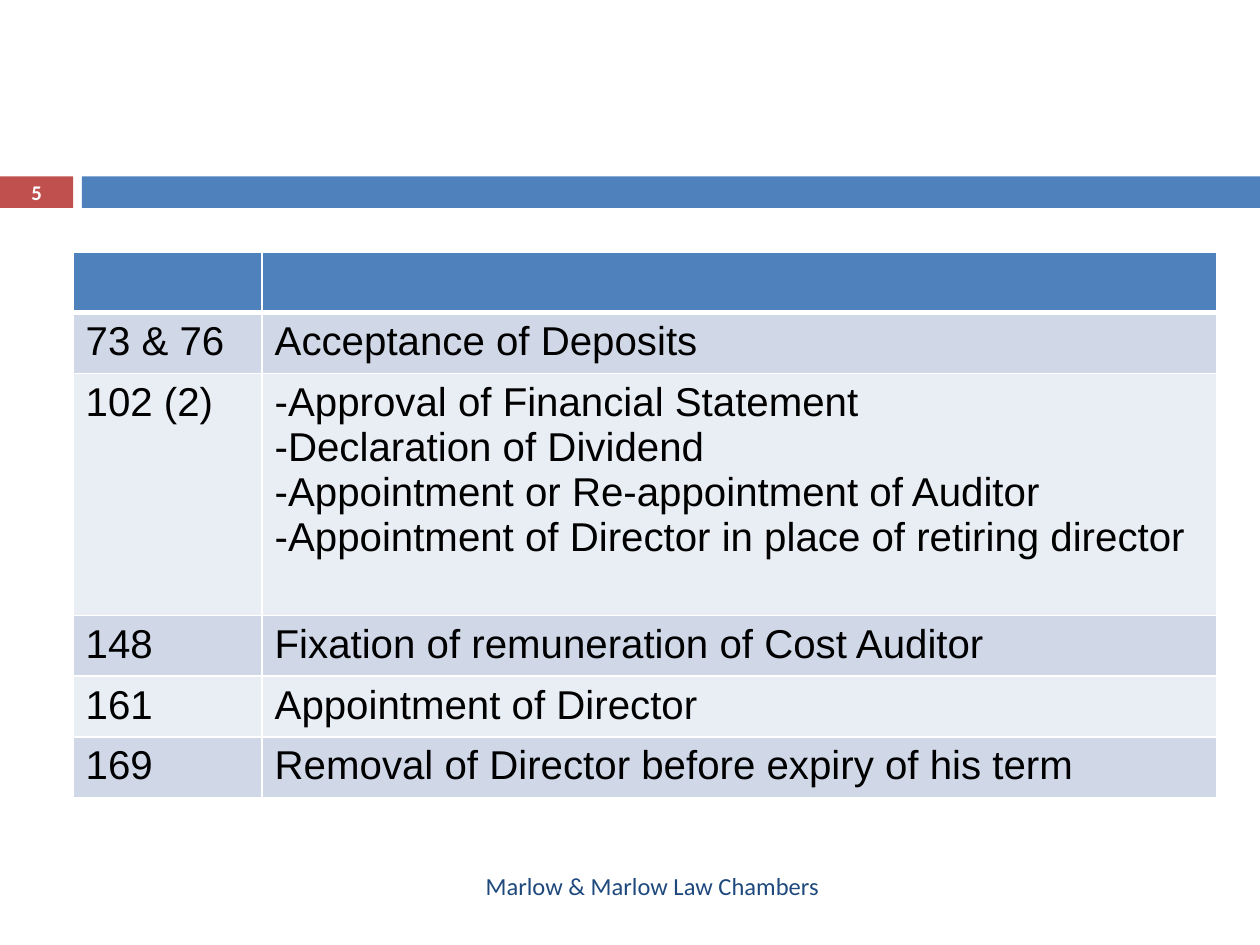
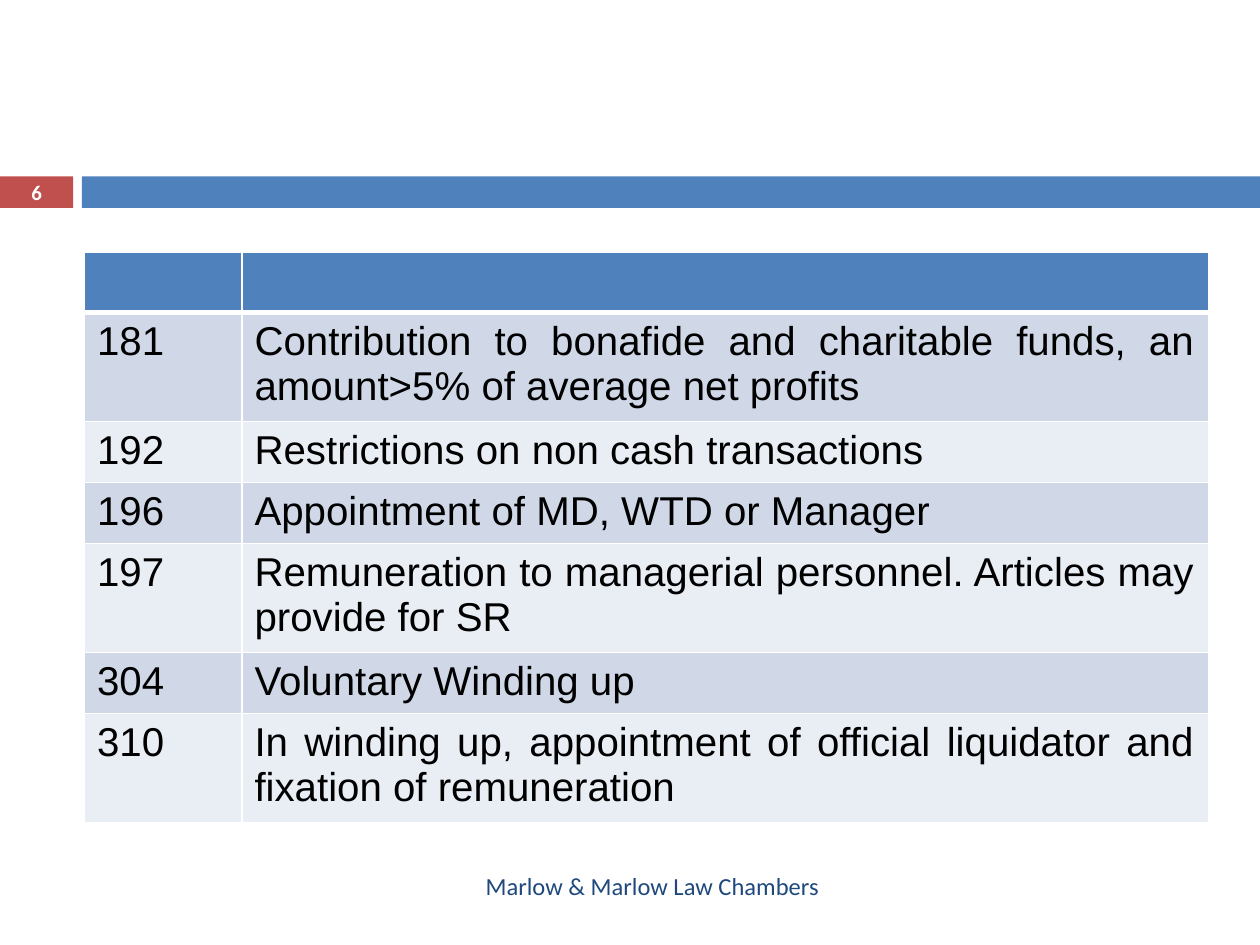
from lxml.etree import SubElement
from pptx import Presentation
from pptx.dml.color import RGBColor
from pptx.enum.shapes import MSO_SHAPE as Shape
from pptx.enum.text import MSO_ANCHOR as Anchor, PP_ALIGN as Align
from pptx.oxml.ns import qn
from pptx.util import Inches, Pt

BLUE, RED, NAVY = "4F81BD", "C0504D", "1F497D"
WHITE, BLACK = "FFFFFF", "000000"
ROW_FILLS = ("E9EDF4", "D0D8E8")
FOOTER = "Marlow & Marlow Law Chambers"
HEADER_HEIGHT = 0.48

DEPOSIT_ROWS = [
    (0.46, "73 & 76", "Acceptance of Deposits"),
    (1.92, "102 (2)", "-Approval of Financial Statement\n"
                      "-Declaration of Dividend\n"
                      "-Appointment or Re-appointment of Auditor\n"
                      "-Appointment of Director in place of retiring director"),
    (0.46, "148", "Fixation of remuneration of Cost Auditor"),
    (0.46, "161", "Appointment of Director"),
    (0.46, "169", "Removal of Director before expiry of his term"),
]
MANAGEMENT_ROWS = [
    (0.86, "181", "Contribution to bonafide and charitable funds, an amount>5% of average net profits"),
    (0.48, "192", "Restrictions on non cash transactions"),
    (0.48, "196", "Appointment of MD, WTD or Manager"),
    (0.86, "197", "Remuneration to managerial personnel. Articles may provide for SR"),
    (0.48, "304", "Voluntary Winding up"),
    (0.86, "310", "In winding up, appointment of official liquidator and fixation of remuneration"),
]


def color(hex_value):
    """Turn a hex string into a colour."""
    return RGBColor.from_string(hex_value)


def style_text(text_frame, size, font_name, font_color, align, bold=False):
    """Format every run of a text frame."""
    for paragraph in text_frame.paragraphs:
        paragraph.alignment = align
        for run in paragraph.runs:
            run.font.size, run.font.name, run.font.bold = Pt(size), font_name, bold
            run.font.color.rgb = color(font_color)


def add_band(slide, box, fill):
    """Draw one plain bar."""
    band = slide.shapes.add_shape(Shape.RECTANGLE, *map(Inches, box))
    band.shadow.inherit = False
    band.fill.solid()
    band.fill.fore_color.rgb = color(fill)
    band.line.fill.background()


def add_label(slide, box, text, size, font_color, align, bold=False):
    """Place a vertically centred line of text."""
    text_frame = slide.shapes.add_textbox(*map(Inches, box)).text_frame
    text_frame.word_wrap = True
    text_frame.vertical_anchor = Anchor.MIDDLE
    text_frame.text = text
    style_text(text_frame, size, "Calibri", font_color, align, bold)


def add_frame(slide, number):
    """Add the bands, slide number and footer."""
    add_band(slide, (0, 1.4, 0.58, 0.25), RED)
    add_band(slide, (0.65, 1.4, 9.35, 0.25), BLUE)
    add_label(slide, (0.67, 6.83, 5.93, 0.4), FOOTER, 14, NAVY, Align.RIGHT)
    add_label(slide, (0, 1.39, 0.58, 0.27), str(number), 11.9, WHITE, Align.CENTER, True)


def set_borders(cell, top, bottom):
    """Give a cell white borders, with top and bottom widths in points."""
    properties = cell._tc.get_or_add_tcPr()
    for side, width in (("L", 1), ("R", 1), ("T", top), ("B", bottom)):
        line = SubElement(properties, qn(f"a:ln{side}"), w=str(Pt(width)))
        fill = SubElement(line, qn("a:solidFill"))
        SubElement(fill, qn("a:srgbClr"), val=WHITE)


def add_section_table(slide, left, top, column_widths, rows, align):
    """Add a table of sections under an empty header row."""
    table_rows = [(HEADER_HEIGHT, "", ""), *rows]
    size = sum(column_widths), sum(row[0] for row in table_rows)
    table = slide.shapes.add_table(len(table_rows), len(column_widths),
                                   *map(Inches, (left, top, *size))).table
    for column, width in zip(table.columns, column_widths):
        column.width = Inches(width)
    for index, (height, *texts) in enumerate(table_rows):
        table.rows[index].height = Inches(height)
        for column, text in enumerate(texts):
            cell = table.cell(index, column)
            set_borders(cell, 3 if index == 1 else 1, 3 if index == 0 else 1)
            cell.fill.solid()
            cell.fill.fore_color.rgb = color(ROW_FILLS[index % 2] if index else BLUE)
            cell.text_frame.text = text
            style_text(cell.text_frame, 23, "Arial", BLACK, align)


def add_section_slide(presentation, number, left, column_widths, rows, align):
    """Add one framed slide with its section table."""
    slide = presentation.slides.add_slide(presentation.slide_layouts[6])
    add_frame(slide, number)
    add_section_table(slide, left, 2, column_widths, rows, align)


def main():
    """Build and save the presentation."""
    presentation = Presentation()
    presentation.slide_width, presentation.slide_height = Inches(10), Inches(7.5)
    add_section_slide(presentation, 5, 0.58, (1.5, 7.58), DEPOSIT_ROWS, Align.LEFT)
    add_section_slide(presentation, 6, 0.67, (1.25, 7.67), MANAGEMENT_ROWS, Align.JUSTIFY)
    presentation.save("out.pptx")


if __name__ == "__main__":
    main()
